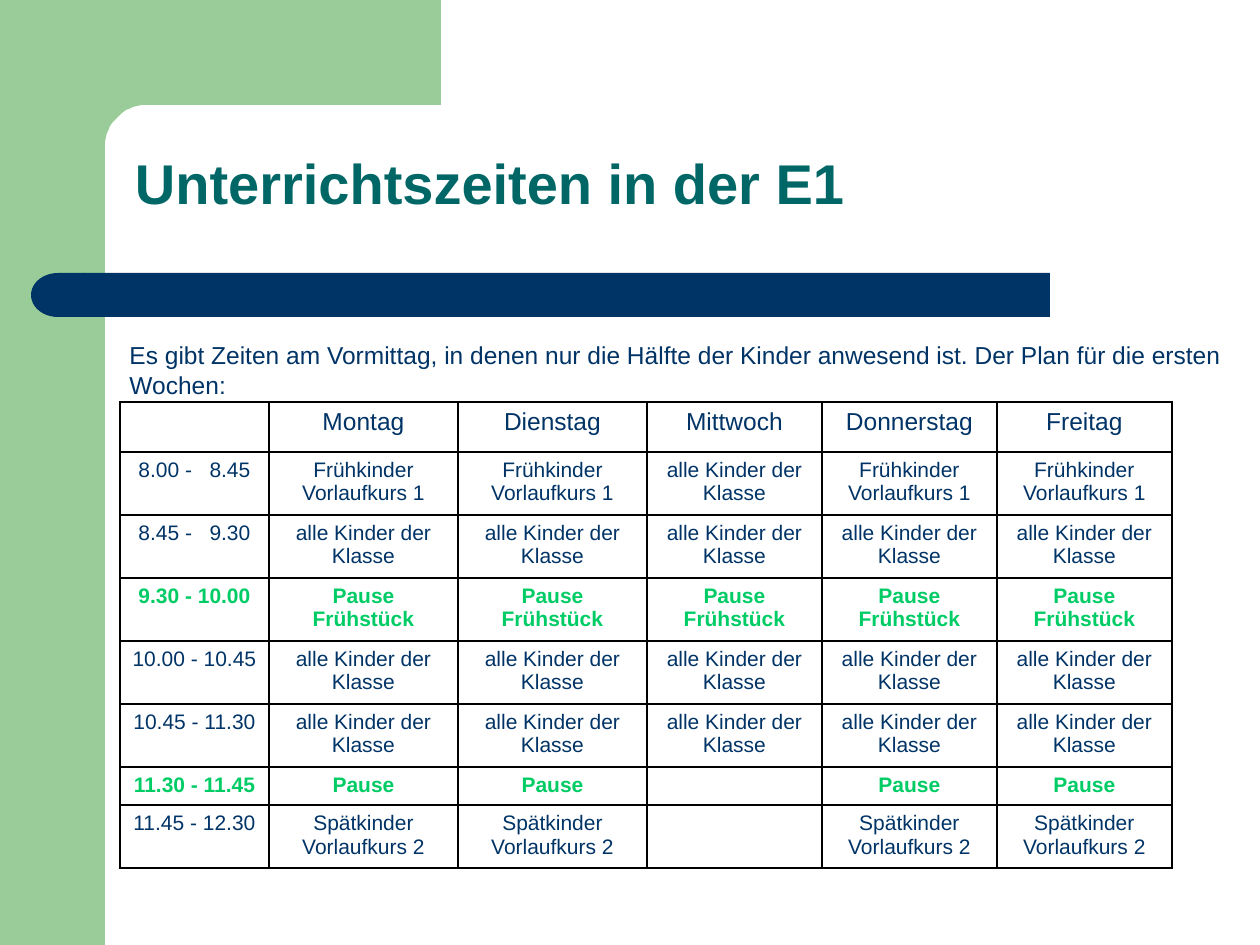
import math
from lxml import etree
from pptx import Presentation
from pptx import util as u
from pptx.dml.color import RGBColor
from pptx.enum import shapes, text
from pptx.oxml import ns

SCALE = u.Inches(1) / 126
COLORS = {"green": "99CC99", "navy": "003366", "teal": "006666",
          "pause": "00CC66", "black": "000000"}


def px(*lengths):
    return [round(length * SCALE) for length in lengths]


def write(frame, words, size=12, color="navy", bold=False, align="LEFT", spacing=1.0):
    frame.word_wrap = True
    para = frame.paragraphs[0]
    para.alignment = getattr(text.PP_ALIGN, align)
    para.line_spacing = spacing
    if not words:
        etree.SubElement(para._p, ns.qn("a:endParaRPr"), sz=str(size * 100))
        return
    span = para.add_run()
    span.text = words
    span.font.name = "Arial"
    span.font.size = u.Pt(size)
    span.font.bold = bold
    span.font.color.rgb = RGBColor.from_string(COLORS[color])


deck = Presentation()
deck.slide_width, deck.slide_height = px(1260, 945)
page = deck.slides.add_slide(deck.slide_layouts[6])

side = page.shapes.add_shape(shapes.MSO_SHAPE.RECTANGLE, *px(0, 0, 105, 945))

arc = [(146 - 41 * math.sin(math.radians(angle)), 146 - 41 * math.cos(math.radians(angle)))
       for angle in range(0, 91, 6)]
outline = page.shapes.build_freeform(441, 0, scale=SCALE)
outline.add_line_segments([(441, 105), *arc, (105, 161), (63, 161), (63, 0)], close=True)
corner = outline.convert_to_shape()

bar = page.shapes.add_shape(shapes.MSO_SHAPE.ROUNDED_RECTANGLE, *px(84, 273, 966, 44))
bar.adjustments[0] = 0
cap = page.shapes.add_shape(shapes.MSO_SHAPE.FLOWCHART_DELAY, *px(31, 273, 54, 44))
cap._element.spPr.get_or_add_xfrm().set("flipH", "1")

for shape, color in [(side, "green"), (corner, "green"), (bar, "navy"), (cap, "navy")]:
    shape.shadow.inherit = False
    shape.fill.solid()
    shape.fill.fore_color.rgb = RGBColor.from_string(COLORS[color])
    shape.line.fill.background()

everyone = ["alle Kinder der Klasse"] * 5
early = ["Frühkinder Vorlaufkurs 1"] * 2
late = ["Spätkinder Vorlaufkurs 2"] * 2
rest = ["Pause"] * 2
timetable = [
    ["", "Montag", "Dienstag", "Mittwoch", "Donnerstag", "Freitag"],
    ["8.00 -   8.45", *early, everyone[0], *early],
    ["8.45 -   9.30", *everyone],
    ["9.30 - 10.00", *["Pause Frühstück"] * 5],
    ["10.00 - 10.45", *everyone],
    ["10.45 - 11.30", *everyone],
    ["11.30 - 11.45", *rest, "", *rest],
    ["11.45 - 12.30", *late, "", *late],
]
widths = [149, 189, 189, 175, 175, 175]
heights = [50, 63, 63, 63, 63, 63, 38, 63]
table = page.shapes.add_table(len(heights), len(widths),
                              *px(120, 402, sum(widths), sum(heights))).table
table.first_row = False
table.horz_banding = False
for column, width in zip(table.columns, px(*widths)):
    column.width = width
for row, height in zip(table.rows, px(*heights)):
    row.height = height

for row, entries in enumerate(timetable):
    is_pause = "Pause" in entries[1]
    for column, words in enumerate(entries):
        cell = table.cell(row, column)
        write(cell.text_frame, words, size=12 if row else 14, bold=is_pause,
              color="pause" if is_pause else "navy", align="CENTER")
        borders = cell._tc.get_or_add_tcPr()
        for edge in ("lnL", "lnR", "lnT", "lnB"):
            border = etree.SubElement(borders, ns.qn(f"a:{edge}"), w=str(u.Pt(1)))
            paint = etree.SubElement(border, ns.qn("a:solidFill"))
            etree.SubElement(paint, ns.qn("a:srgbClr"), val=COLORS["black"])
        cell.fill.background()

intro = page.shapes.add_textbox(*px(117, 334, 1143, 72))
write(intro.text_frame, "Es gibt Zeiten am Vormittag, in denen nur die Hälfte der Kinder "
      "anwesend ist. Der Plan für die ersten Wochen:", size=14)

title = page.shapes.add_shape(shapes.MSO_SHAPE.ROUNDED_RECTANGLE, *px(113, 140, 1092, 149))
title.adjustments[0] = 0.22
title.shadow.inherit = False
title.fill.background()
title.line.fill.background()
title.text_frame.vertical_anchor = text.MSO_ANCHOR.TOP
write(title.text_frame, "Unterrichtszeiten in der E1", size=32, color="teal",
      bold=True, spacing=0.9)

deck.save("out.pptx")
